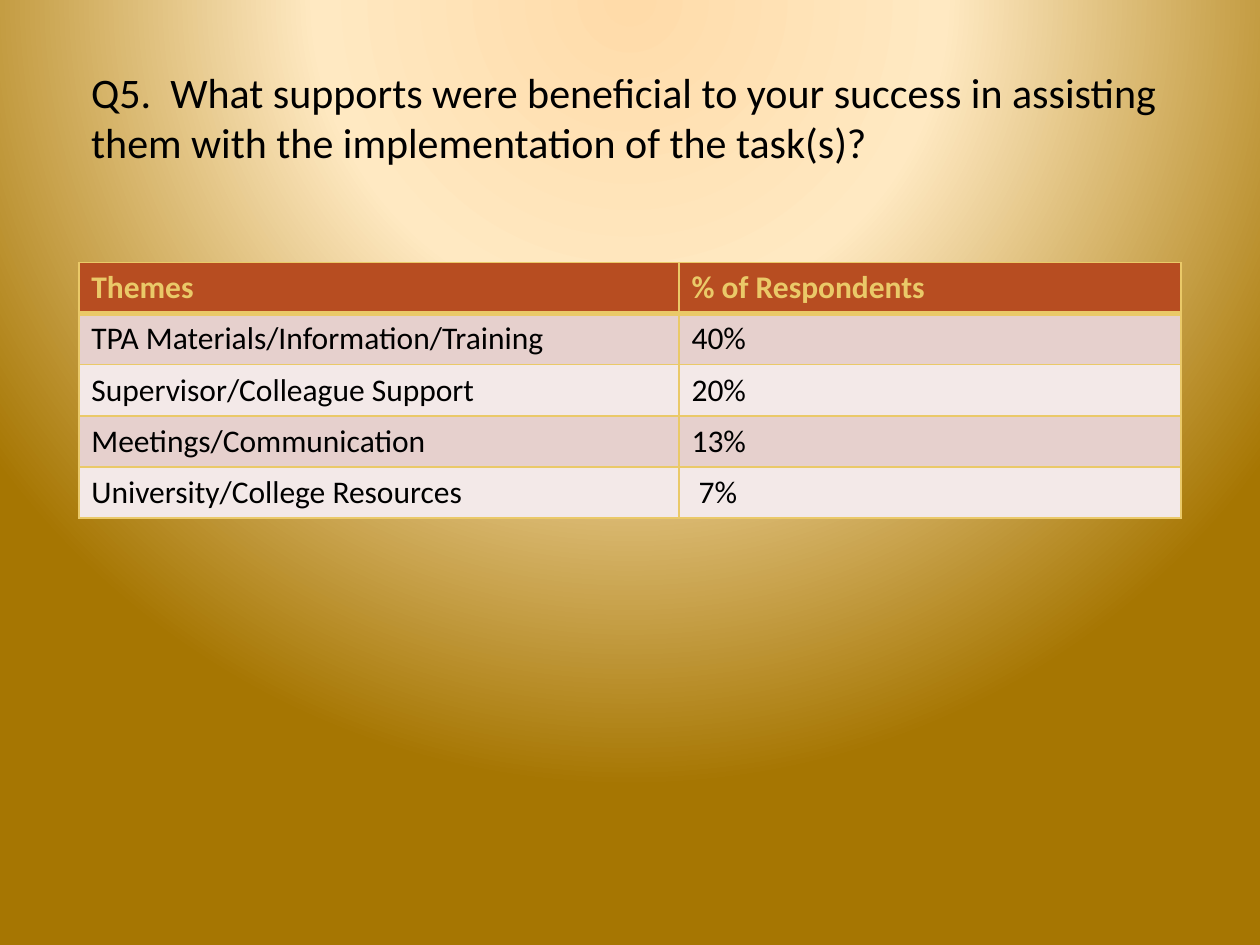
from lxml import etree
from pptx import Presentation
from pptx.dml.color import RGBColor
from pptx.enum.text import MSO_ANCHOR
from pptx.oxml import parse_xml
from pptx.oxml.ns import nsdecls, qn
from pptx.util import Pt

MIDDLE = MSO_ANCHOR.MIDDLE
COLORS = {
    "text": "000000", "gold": "EAC968", "head": "B74D21",
    "odd": "E6D0CD", "even": "F3E9E8",
    "core": "FFDBA9", "glow": "FFE9C2", "edge": "A67602",
}
LEFT, WIDTH = 45, 630
ROW = 29.2
ROWS = [
    ("Themes", "% of Respondents"),
    ("TPA Materials/Information/Training", "40%"),
    ("Supervisor/Colleague Support", "20%"),
    ("Meetings/Communication", "13%"),
    ("University/College Resources", " 7%"),
]


def add_run(para, text, size, color, bold=False):
    run = para.add_run()
    run.text = text
    font = run.font
    font.name, font.size, font.bold = "Calibri", Pt(size), bold
    font.color.rgb = RGBColor.from_string(COLORS[color])


def add_border(cell, side, width):
    """Draw one gold edge; side is L, R, T or B."""
    line = etree.SubElement(cell._tc.get_or_add_tcPr(), qn(f"a:ln{side}"), w=str(Pt(width)))
    fill = etree.SubElement(line, qn("a:solidFill"))
    etree.SubElement(fill, qn("a:srgbClr"), val=COLORS["gold"])


deck = Presentation()
deck.slide_width, deck.slide_height = Pt(720), Pt(540)
slide = deck.slides.add_slide(deck.slide_layouts[6])

# Radial background
stops = "".join(
    f'<a:gs pos="{pos * 1000}"><a:srgbClr val="{COLORS[name]}"/></a:gs>'
    for pos, name in ((0, "core"), (40, "glow"), (100, "edge"))
)
back = parse_xml(
    f'<p:bg {nsdecls("p", "a")}><p:bgPr><a:gradFill rotWithShape="1">'
    f'<a:gsLst>{stops}</a:gsLst><a:path path="circle">'
    '<a:fillToRect l="50000" t="-80000" r="50000" b="180000"/></a:path>'
    '</a:gradFill><a:effectLst/></p:bgPr></p:bg>'
)
slide.element.cSld.insert(0, back)

# Title
title = slide.shapes.add_textbox(Pt(LEFT), Pt(21.6), Pt(WIDTH), Pt(90)).text_frame
title.word_wrap = True
title.vertical_anchor = MIDDLE
add_run(
    title.paragraphs[0],
    "Q5.  What supports were beneficial to your success in assisting "
    "them with the implementation of the task(s)?",
    24, "text",
)

# Table of themes
table = slide.shapes.add_table(
    len(ROWS), 2, Pt(LEFT), Pt(150), Pt(WIDTH), Pt(ROW * len(ROWS))
).table
for col, width in zip(table.columns, (343, 287)):
    col.width = Pt(width)
for i, row in enumerate(ROWS):
    table.rows[i].height = Pt(ROW)
    head = i == 0
    shade = "head" if head else "odd" if i % 2 else "even"
    for j, text in enumerate(row):
        cell = table.cell(i, j)
        add_run(cell.text_frame.paragraphs[0], text, 18, "gold" if head else "text", head)
        widths = {"L": 1, "R": 1, "T": 3 if i == 1 else 1, "B": 3 if head else 1}
        for side, width in widths.items():
            add_border(cell, side, width)
        cell.fill.solid()
        cell.fill.fore_color.rgb = RGBColor.from_string(COLORS[shade])

deck.save("out.pptx")
